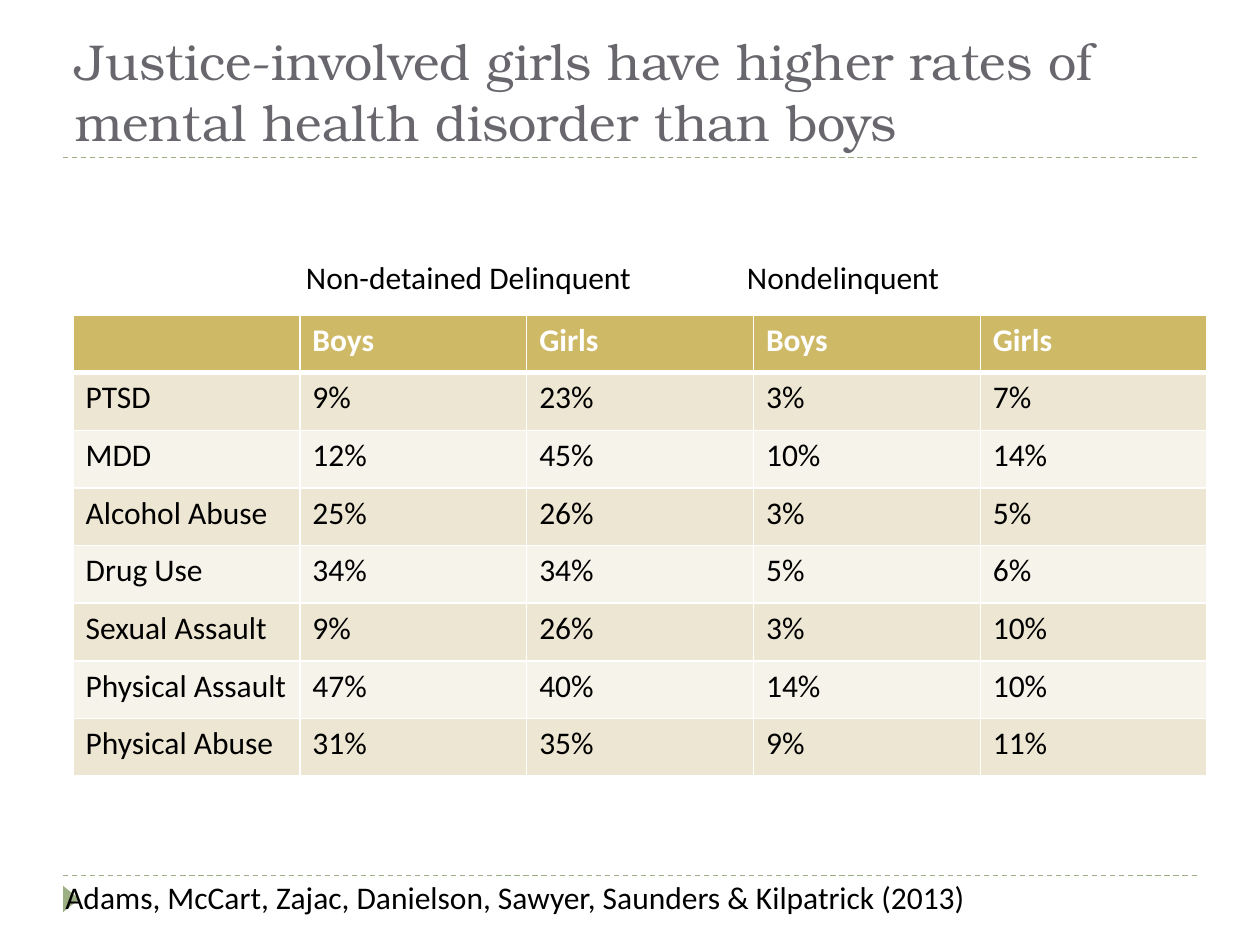
from dataclasses import dataclass

import pptx
import pptx.dml.color
import pptx.enum.dml
import pptx.enum.shapes
import pptx.enum.text
import pptx.oxml.ns
import pptx.util
from lxml import etree
from pptx.dml.color import RGBColor
from pptx.util import Inches

WHITE = RGBColor(0xFF, 0xFF, 0xFF)
BLACK = RGBColor(0x00, 0x00, 0x00)
GRAY = RGBColor(0x69, 0x67, 0x6D)
GREEN = RGBColor(0x9C, 0xB0, 0x84)
GOLD = RGBColor(0xCE, 0xB9, 0x66)
SAND = RGBColor(0xED, 0xE6, 0xD3)
CREAM = RGBColor(0xF6, 0xF3, 0xEA)

BODY_FORMAT = {"name": "Calibri", "size": pptx.util.Pt(18), "bold": False}
TITLE_FORMAT = {"name": "TeX Gyre Bonum", "size": pptx.util.Pt(28.8), "bold": False}

RATES = [
    ("", "Boys", "Girls", "Boys", "Girls"),
    ("PTSD", "9%", "23%", "3%", "7%"),
    ("MDD", "12%", "45%", "10%", "14%"),
    ("Alcohol Abuse", "25%", "26%", "3%", "5%"),
    ("Drug Use", "34%", "34%", "5%", "6%"),
    ("Sexual Assault", "9%", "26%", "3%", "10%"),
    ("Physical Assault", "47%", "40%", "14%", "10%"),
    ("Physical Abuse", "31%", "35%", "9%", "11%"),
]


@dataclass
class Caption:
    text: str
    left: float
    top: float
    width: float
    height: float
    format: dict
    color: RGBColor = BLACK
    anchor: pptx.enum.text.MSO_ANCHOR = pptx.enum.text.MSO_ANCHOR.TOP


TITLE = Caption(
    "Justice-involved girls have higher rates of mental health disorder than boys",
    0.5, 0.17, 9, 1.08, TITLE_FORMAT, GRAY, pptx.enum.text.MSO_ANCHOR.BOTTOM,
)
GROUP_HEADINGS = Caption(
    "Non-detained Delinquent\t\tNondelinquent", 2.33, 2, 7.25, 0.4, BODY_FORMAT
)
CITATION = Caption(
    "Adams, McCart, Zajac, Danielson, Sawyer, Saunders & Kilpatrick (2013)",
    0.42, 6.92, 8.5, 0.4, BODY_FORMAT,
)


def write(paragraph, text: str, text_format: dict, color: RGBColor) -> None:
    run = paragraph.add_run()
    run.text = text
    for attribute, value in text_format.items():
        setattr(run.font, attribute, value)
    run.font.color.rgb = color


def draw_caption(slide, caption: Caption) -> None:
    box = slide.shapes.add_textbox(
        Inches(caption.left), Inches(caption.top),
        Inches(caption.width), Inches(caption.height),
    )
    box.text_frame.word_wrap = True
    box.text_frame.vertical_anchor = caption.anchor
    write(box.text_frame.paragraphs[0], caption.text, caption.format, caption.color)


def draw_rule(slide, y: float) -> None:
    rule = slide.shapes.add_connector(
        pptx.enum.shapes.MSO_CONNECTOR.STRAIGHT,
        Inches(0.5), Inches(y), Inches(9.5), Inches(y),
    )
    rule.line.color.rgb = GREEN
    rule.line.width = pptx.util.Pt(0.75)
    rule.line.dash_style = pptx.enum.dml.MSO_LINE.DASH
    etree.SubElement(rule._element.spPr, pptx.oxml.ns.qn("a:effectLst"))


def draw_marker(slide) -> None:
    marker = slide.shapes.add_shape(
        pptx.enum.shapes.MSO_SHAPE.ISOSCELES_TRIANGLE,
        Inches(0.46), Inches(7.07), Inches(0.21), Inches(0.13),
    )
    marker.rotation = 90
    marker.shadow.inherit = False
    marker.fill.solid()
    marker.fill.fore_color.rgb = GREEN
    marker.line.fill.background()


def add_borders(cell, widths: dict[str, float]) -> None:
    properties = cell._tc.get_or_add_tcPr()
    for side, width in widths.items():
        border = etree.SubElement(
            properties, pptx.oxml.ns.qn(f"a:ln{side}"), w=str(pptx.util.Pt(width))
        )
        fill = etree.SubElement(border, pptx.oxml.ns.qn("a:solidFill"))
        etree.SubElement(fill, pptx.oxml.ns.qn("a:srgbClr"), val=str(WHITE))


def draw_rates(slide) -> None:
    row_count, column_count = len(RATES), len(RATES[0])
    table = slide.shapes.add_table(
        row_count, column_count, Inches(0.58), Inches(2.5), Inches(9), Inches(3.66)
    ).table
    table.horz_banding = False
    for row, values in enumerate(RATES):
        is_header = row == 0
        background = GOLD if is_header else (SAND if row % 2 else CREAM)
        borders = {"L": 1, "R": 1, "T": 3 if row == 1 else 1, "B": 3 if is_header else 1}
        for column, value in enumerate(values):
            cell = table.cell(row, column)
            add_borders(cell, borders)
            cell.fill.solid()
            cell.fill.fore_color.rgb = background
            if value:
                write(
                    cell.text_frame.paragraphs[0], value,
                    BODY_FORMAT | {"bold": is_header}, WHITE if is_header else BLACK,
                )


def main() -> None:
    deck = pptx.Presentation()
    deck.slide_width, deck.slide_height = Inches(10), Inches(7.5)
    slide = deck.slides.add_slide(deck.slide_layouts[6])

    # Page furniture
    for y in (6.95, 1.25):
        draw_rule(slide, y)
    draw_marker(slide)

    # Title, table and captions
    draw_caption(slide, TITLE)
    draw_rates(slide)
    draw_caption(slide, GROUP_HEADINGS)
    draw_caption(slide, CITATION)

    deck.save("out.pptx")


if __name__ == "__main__":
    main()
